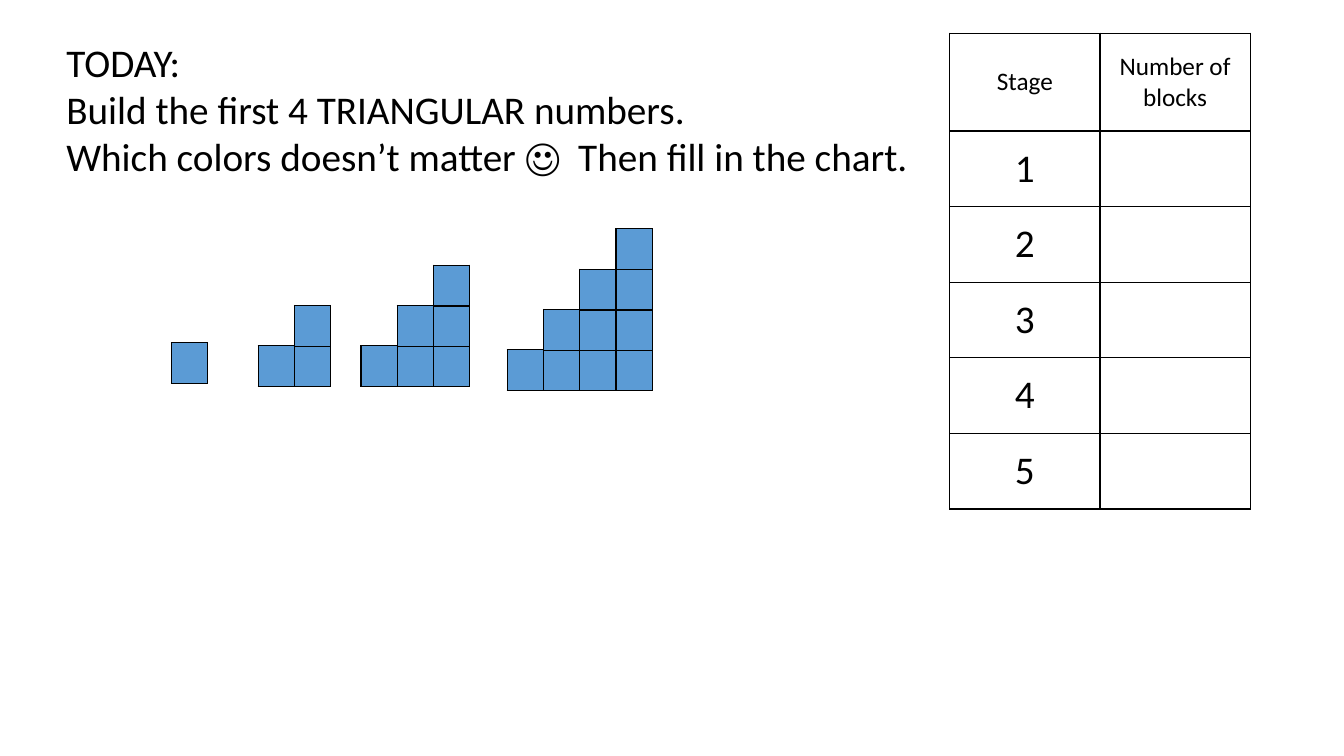
from dataclasses import dataclass

from lxml.etree import SubElement
from pptx import Presentation
from pptx.dml.color import RGBColor as Rgb
from pptx.enum.text import MSO_ANCHOR as Anchor, MSO_AUTO_SIZE as AutoSize, PP_ALIGN as Align
from pptx.oxml.ns import qn
from pptx.util import Inches, Pt


@dataclass(frozen=True)
class Theme:
    font: str = "Calibri"
    ink: str = "000000"
    block: str = "5B9BD5"
    border: float = 1
    header_size: int = 18
    body_size: int = 28


THEME = Theme()
SLIDE_WIDTH, SLIDE_HEIGHT = 13.33, 7.5
BLOCK_WIDTH, BLOCK_HEIGHT = 0.36, 0.4
STAIRCASES = [(1, 1.7, 3.4), (2, 2.92, 3.43), (3, 4.3, 3.43), (4, 6.11, 3.47)]
STAGE_WIDTH, HEADER_HEIGHT, STAGE_HEIGHT = 1.49, 0.97, 0.75
HEADERS = ["Stage", "Number of blocks"]
STAGE_COUNT = 5
INSTRUCTIONS = [
    "TODAY: \vBuild the first 4 TRIANGULAR numbers.",
    "Which colors doesn’t matter ☺  Then fill in the chart.",
]


def apply_format(target, values):
    for name, value in values.items():
        setattr(target, name, value)


def format_text(paragraph, size):
    apply_format(paragraph.font, {"name": THEME.font, "size": Pt(size)})
    paragraph.font.color.rgb = Rgb.from_string(THEME.ink)


def outline_cell(cell):
    properties = cell._tc.get_or_add_tcPr()
    for side in ("lnL", "lnR", "lnT", "lnB"):
        line = SubElement(properties, qn(f"a:{side}"), w=str(Pt(THEME.border)))
        fill = SubElement(line, qn("a:solidFill"))
        SubElement(fill, qn("a:srgbClr"), val=THEME.ink)


def add_grid(slide, left, top, widths, heights, fill=None):
    lengths = map(Inches, (left, top, sum(widths), sum(heights)))
    grid = slide.shapes.add_table(len(heights), len(widths), *lengths).table
    apply_format(grid, {"first_row": False, "horz_banding": False})
    for column, width in zip(grid.columns, widths):
        column.width = Inches(width)
    for row, height in zip(grid.rows, heights):
        row.height = Inches(height)
    for cell in grid.iter_cells():
        outline_cell(cell)
        if fill:
            cell.fill.solid()
            cell.fill.fore_color.rgb = Rgb.from_string(fill)
        else:
            cell.fill.background()
    return grid


def add_staircase(slide, steps, last_left, base_top):
    for column in range(steps):
        left = last_left - (steps - 1 - column) * BLOCK_WIDTH
        for level in range(column + 1):
            top = base_top - level * BLOCK_HEIGHT
            add_grid(slide, left, top, [BLOCK_WIDTH], [BLOCK_HEIGHT], THEME.block)


def write_cell(cell, text, size):
    cell.text = text
    cell.vertical_anchor = Anchor.MIDDLE
    paragraph = cell.text_frame.paragraphs[0]
    paragraph.alignment = Align.CENTER
    format_text(paragraph, size)


def add_stage_chart(slide, left, top):
    heights = [HEADER_HEIGHT] + [STAGE_HEIGHT] * STAGE_COUNT
    chart = add_grid(slide, left, top, [STAGE_WIDTH] * len(HEADERS), heights)
    for column, header in enumerate(HEADERS):
        write_cell(chart.cell(0, column), header, THEME.header_size)
    for stage in range(1, STAGE_COUNT + 1):
        write_cell(chart.cell(stage, 0), str(stage), THEME.body_size)


def add_instructions(slide, left, top, width, height):
    box = slide.shapes.add_textbox(*map(Inches, (left, top, width, height)))
    frame = box.text_frame
    apply_format(frame, {"word_wrap": True, "auto_size": AutoSize.SHAPE_TO_FIT_TEXT})
    for index, text in enumerate(INSTRUCTIONS):
        paragraph = frame.add_paragraph() if index else frame.paragraphs[0]
        paragraph.text = text
        format_text(paragraph, THEME.body_size)


def main():
    deck = Presentation()
    apply_format(deck, {"slide_width": Inches(SLIDE_WIDTH), "slide_height": Inches(SLIDE_HEIGHT)})
    slide = deck.slides.add_slide(deck.slide_layouts[6])
    for steps, last_left, base_top in STAIRCASES:
        add_staircase(slide, steps, last_left, base_top)
    add_stage_chart(slide, 9.42, 0.33)
    add_instructions(slide, 0.56, 0.33, 10.75, 1.51)
    deck.save("out.pptx")


if __name__ == "__main__":
    main()
